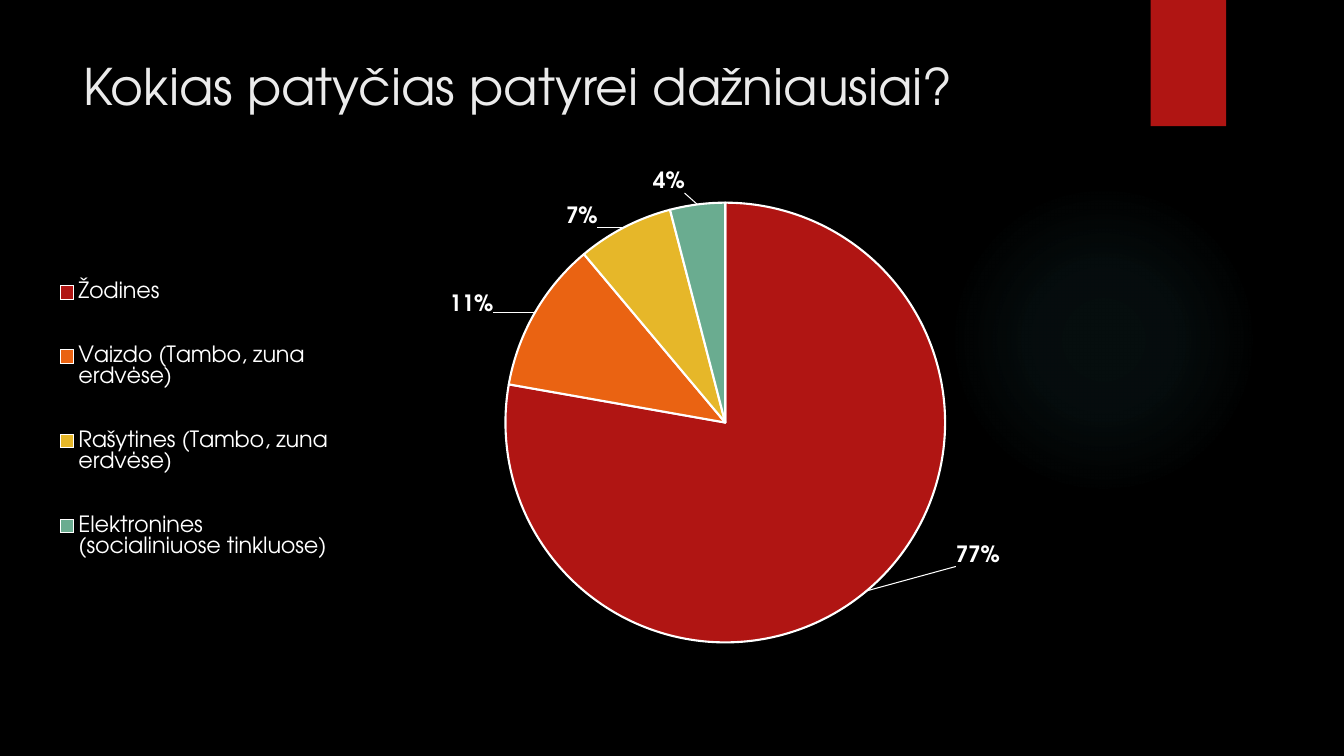
from copy import deepcopy

from lxml import etree
from pptx import Presentation
from pptx import util as u
from pptx.chart.data import CategoryChartData
from pptx.dml.color import RGBColor
from pptx.enum import chart as ch, shapes, text
from pptx.oxml import parse_xml
from pptx.oxml.ns import nsdecls, qn

FACE = "TeX Gyre Adventor"
WHITE = "FFFFFF"
RED = "B01513"

# Category, share, slice colour, label shift across and down
ROWS = [
    ("Žodines", 77, RED, 0.07, -0.09),
    ("Vaizdo (Tambo, zuna erdvėse)", 11, "EA6312", -0.03, 0.01),
    ("Rašytines (Tambo, zuna erdvėse)", 7, "E6B729", -0.02, 0.01),
    ("Elektronines (socialiniuose tinkluose)", 4, "6AAC90", -0.01, -0.01),
]


def paint(fill, tone):
    fill.solid()
    fill.fore_color.rgb = RGBColor.from_string(tone)


def style(font, size, tone, bold=False):
    font.name, font.size, font.bold = FACE, u.Pt(size), bold
    font.color.rgb = RGBColor.from_string(tone)


def box(*lens):
    return [u.Cm(n) for n in lens]


def add_shape(slide, kind, lens, tone):
    shape = slide.shapes.add_shape(kind, *box(*lens))
    shape.shadow.inherit = False
    paint(shape.fill, tone)
    shape.line.fill.background()
    return shape


def add_glow(slide, lens, tone, stops):
    shape = add_shape(slide, shapes.MSO_SHAPE.OVAL, lens, tone)
    marks = "".join(
        f'<a:gs pos="{pos * 1000}"><a:srgbClr val="{tone}">'
        f'<a:alpha val="{alpha * 1000}"/></a:srgbClr></a:gs>'
        for pos, alpha in stops)
    grad = parse_xml(
        f'<a:gradFill {nsdecls("a")}><a:gsLst>{marks}</a:gsLst>'
        '<a:path path="circle"><a:fillToRect l="50000" t="50000" '
        'r="50000" b="50000"/></a:path></a:gradFill>')
    props = shape.element.spPr
    props.replace(props.find(qn("a:solidFill")), grad)


def add_title(slide, lens, words):
    frame = slide.shapes.add_textbox(*box(*lens)).text_frame
    frame.word_wrap = True
    frame.vertical_anchor = text.MSO_ANCHOR.TOP
    run = frame.paragraphs[0].add_run()
    run.text = words
    style(run.font, 36, "EBEBEB")


def layout(x, y, w=None, h=None, inner=False, edge=True):
    """Manual layout in fractions of the chart."""
    parts = [("layoutTarget", "inner")] if inner else []
    if edge:
        parts += [("xMode", "edge"), ("yMode", "edge")]
    parts += [("x", x), ("y", y)]
    if w:
        parts += [("w", w), ("h", h)]
    tags = "".join(f'<c:{tag} val="{val}"/>' for tag, val in parts)
    return parse_xml(f'<c:layout {nsdecls("c")}><c:manualLayout>{tags}'
                     '</c:manualLayout></c:layout>')


def shift_label(labels, idx, x, y):
    """Give one slice its own label place, styled like the rest."""
    root = labels._element
    item = etree.Element(qn("c:dLbl"))
    etree.SubElement(item, qn("c:idx")).set("val", str(idx))
    item.append(layout(x, y, edge=False))
    for tag in ("numFmt", "txPr", "dLblPos", "showLegendKey", "showVal",
                "showCatName", "showSerName", "showPercent",
                "showBubbleSize"):
        item.append(deepcopy(root.find(qn(f"c:{tag}"))))
    root.insert(idx, item)


def add_leaders(labels, tone):
    """Draw lines from moved labels to their slices."""
    root = labels._element
    for old in root.findall(qn("c:showLeaderLines")):
        root.remove(old)
    etree.SubElement(root, qn("c:showLeaderLines")).set("val", "1")
    root.append(parse_xml(
        f'<c:leaderLines {nsdecls("c", "a")}><c:spPr><a:ln w="9525">'
        f'<a:solidFill><a:srgbClr val="{tone}"/></a:solidFill>'
        '</a:ln></c:spPr></c:leaderLines>'))


def add_pie(slide, lens):
    data = CategoryChartData()
    data.categories = [row[0] for row in ROWS]
    data.add_series("Series 1", [row[1] for row in ROWS])
    pie = slide.shapes.add_chart(
        ch.XL_CHART_TYPE.PIE, *box(*lens), data).chart
    pie.has_title = False
    style(pie.font, 10, WHITE)

    # Plot area
    area = pie._chartSpace.chart.plotArea
    for old in area.findall(qn("c:layout")):
        area.remove(old)
    area.insert(0, layout(0.37, 0.09, 0.36, 0.8, inner=True))

    # Legend
    pie.has_legend = True
    key = pie.legend
    key.position = ch.XL_LEGEND_POSITION.BOTTOM
    key.include_in_layout = False
    style(key.font, 16, WHITE)
    root = key._element
    for old in root.findall(qn("c:layout")):
        root.remove(old)
    root.find(qn("c:legendPos")).addnext(layout(0, 0.16, 0.23, 0.65))

    # Slices and their labels
    plot = pie.plots[0]
    plot.vary_by_categories = True
    series = plot.series[0]
    labels = series.data_labels
    labels.show_value = True
    labels.number_format = '0"%"'
    labels.number_format_is_linked = False
    labels.position = ch.XL_LABEL_POSITION.OUTSIDE_END
    style(labels.font, 16, WHITE, True)
    for idx, (_, _, tone, x, y) in enumerate(ROWS):
        part = series.points[idx].format
        paint(part.fill, tone)
        part.line.color.rgb = RGBColor.from_string(WHITE)
        part.line.width = u.Pt(1.5)
        shift_label(labels, idx, x, y)
    add_leaders(labels, WHITE)


def main():
    deck = Presentation()
    deck.slide_width, deck.slide_height = box(33.87, 19.05)
    slide = deck.slides.add_slide(deck.slide_layouts[6])
    paint(slide.background.fill, "000000")

    # Backdrop
    add_glow(slide, (23.9, 4.65, 7.82, 7.82), "50B9C1",
             [(0, 7), (36, 6), (69, 0)])
    add_shape(slide, shapes.MSO_SHAPE.RECTANGLE, (29, 0, 1.9, 3.18), RED)

    # Content
    add_title(slide, (1.85, 1.27, 26.14, 3.89),
              "Kokias patyčias patyrei dažniausiai?")
    add_pie(slide, (1.35, 3.78, 30.78, 14.02))
    deck.save("out.pptx")


if __name__ == "__main__":
    main()
